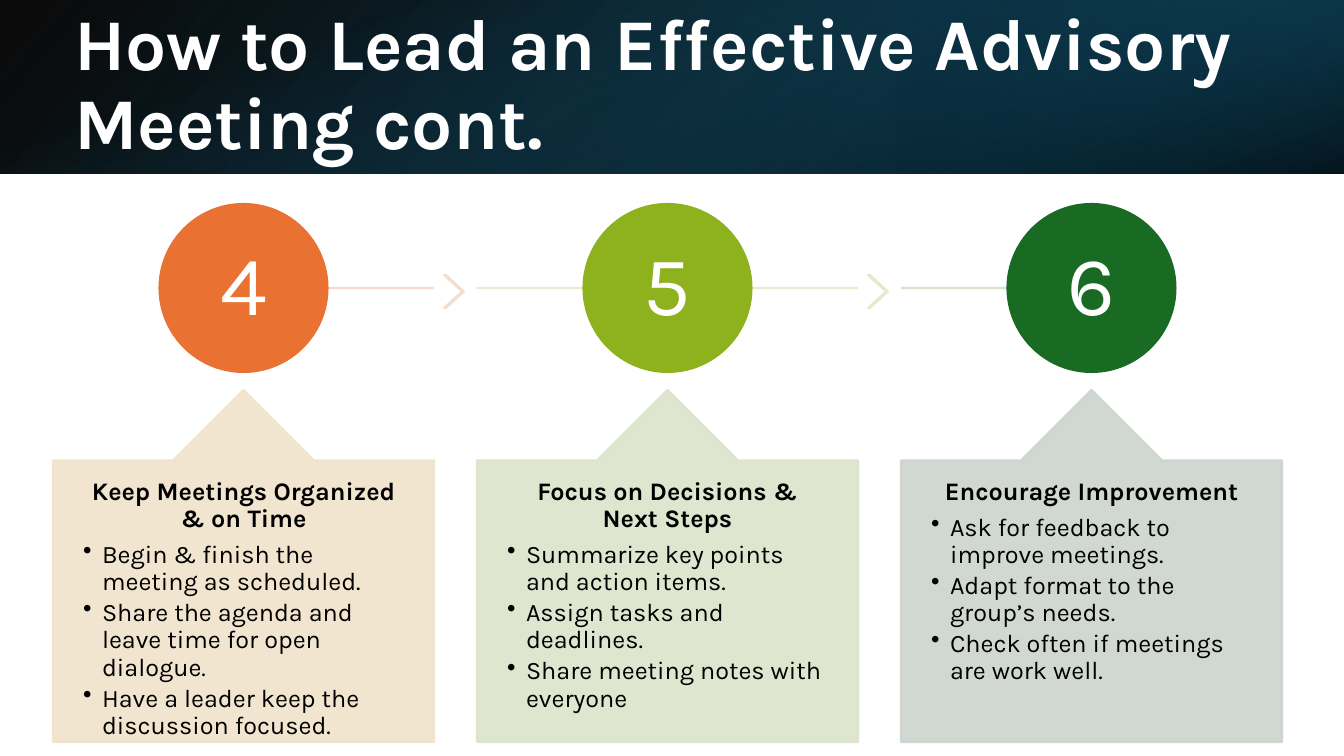
from lxml.etree import SubElement
from pptx import Presentation
from pptx.dml.color import RGBColor
from pptx.enum.shapes import MSO_CONNECTOR, MSO_SHAPE as Shape
from pptx.enum.text import MSO_ANCHOR as Anchor, MSO_AUTO_SIZE, PP_ALIGN as Align
from pptx.oxml.ns import qn
from pptx.util import Pt

PX = 914400 / 100.8
FONT = "Karla"
WHITE, BLACK = "FFFFFF", "000000"
CARD_LEFT, CARD_STEP, CARD_W = 53, 424, 381
CIRCLE = 168
LINE_Y = 288


def px(*lengths):
    return [round(length * PX) for length in lengths]


def paint(part, color, opacity=100):
    """Give a shape or connector one colour for fill and 1.5 pt line, without shadow."""
    part.line.color.rgb = RGBColor.from_string(color)
    part.line.width = Pt(1.5)
    properties = part._element.spPr
    if hasattr(part, "fill"):
        part.fill.solid()
        part.fill.fore_color.rgb = RGBColor.from_string(color)
        part.shadow.inherit = False
    else:
        SubElement(properties, qn("a:effectLst"))
    if opacity < 100:
        for tint in properties.iter(qn("a:srgbClr")):
            SubElement(tint, qn("a:alpha"), val=str(opacity * 1000))


prs = Presentation()
prs.slide_width, prs.slide_height = px(1344, 756)
slide = prs.slides.add_slide(prs.slide_layouts[5])
shapes = slide.shapes

# Header: three overlaid gradients; stops are position %, colour, opacity %
header_layers = [
    ((0, 0, 1344, 174), 0, True, 140, [(0, "000000", 96), (100, "104862", 100)]),
    ((896, 0, 448, 174), 180, True, 320, [(19, "0B3041", 68), (100, "156082", 79)]),
    ((585, -585, 174, 1344), 90, False, 340, [(23, "156082", 0), (99, "000000", 74)]),
]
for box, rotation, flipped, angle, stops in header_layers:
    band = shapes.add_shape(Shape.RECTANGLE, *px(*box))
    band.rotation = rotation
    band.shadow.inherit = False
    band.line.fill.background()
    if flipped:
        band._element.spPr.xfrm.set("flipH", "1")
    band.fill.gradient()
    band.fill.gradient_angle = 360 - angle
    for stop, (position, color, _) in zip(band.fill.gradient_stops, stops):
        stop.position = position / 100
        stop.color.rgb = RGBColor.from_string(color)
    for tint, (_, _, opacity) in zip(band._element.spPr.iter(qn("a:srgbClr")), stops):
        SubElement(tint, qn("a:alpha"), val=str(opacity * 1000))

title = shapes.title
title._element.getparent().append(title._element)
title.left, title.top, title.width, title.height = px(64, 38, 1195, 97)
title.text_frame.text = "How to Lead an Effective Advisory Meeting cont."
title.text_frame.auto_size = MSO_AUTO_SIZE.NONE
title.text_frame.vertical_anchor = Anchor.MIDDLE
heading = title.text_frame.paragraphs[0]
heading.alignment = Align.LEFT
heading.line_spacing = 0.9
heading.font.name, heading.font.size, heading.font.bold = FONT, Pt(52), True
heading.font.color.rgb = RGBColor.from_string(WHITE)

# Number, circle, card, line and chevron colours, line span within the card, texts
steps = [
    ("4", "E97132", "F0E3CB", "F7D5CE", "F3DDCC", (212, CARD_W),
     ["Keep Meetings Organized & on Time",
      "Begin & finish the meeting as scheduled.",
      "Share the agenda and leave time for open dialogue.",
      "Have a leader keep the discussion focused."]),
    ("5", "8EB21E", "DBE4CA", "ECE8CA", "E5E8CA", (0, CARD_W),
     ["Focus on Decisions & Next Steps",
      "Summarize key points and action items.",
      "Assign tasks and deadlines.",
      "Share meeting notes with everyone"]),
    ("6", "196B24", "CCD4CD", "D3DFCA", None, (0, 190),
     ["Encourage Improvement",
      "Ask for feedback to improve meetings.",
      "Adapt format to the group’s needs.",
      "Check often if meetings are work well."]),
]
for index, (number, strong, pale, line_color, chevron_color, span, texts) in enumerate(steps):
    left = CARD_LEFT + index * CARD_STEP

    link = shapes.add_connector(
        MSO_CONNECTOR.STRAIGHT, *px(left + span[0], LINE_Y, left + span[1], LINE_Y))
    paint(link, line_color, 90)
    if chevron_color:
        chevron = shapes.add_shape(Shape.CHEVRON, *px(left + 391, 275, 20, 33))
        chevron.adjustments[0] = 0.9
        paint(chevron, chevron_color, 90)

    circle = shapes.add_shape(
        Shape.OVAL, *px(left + (CARD_W - CIRCLE) / 2, LINE_Y - CIRCLE / 2, CIRCLE, CIRCLE))
    paint(circle, strong)
    circle.text_frame.text = number
    circle.text_frame.vertical_anchor = Anchor.MIDDLE
    digit = circle.text_frame.paragraphs[0]
    digit.alignment = Align.CENTER
    digit.line_spacing = 0.9
    digit.font.name, digit.font.size = FONT, Pt(60)
    digit.font.color.rgb = RGBColor.from_string(WHITE)

    card = shapes.add_shape(Shape.UP_ARROW_CALLOUT, *px(left, 390, CARD_W, 352))
    for place, ratio in enumerate((0.5, 0.2, 0.2, 1)):
        card.adjustments[place] = ratio
    paint(card, pale, 90)
    frame = card.text_frame
    frame.word_wrap = True
    frame.vertical_anchor = Anchor.TOP
    frame.margin_left, frame.margin_top, frame.margin_right, frame.margin_bottom = px(30, 18, 30, 0)
    frame.text = "\n".join(texts)
    for row, paragraph in enumerate(frame.paragraphs):
        is_heading = row == 0
        paragraph.alignment = Align.CENTER if is_heading else Align.LEFT
        paragraph.line_spacing = 0.9
        paragraph.space_after = Pt(6.3 if is_heading else 2.7)
        if not is_heading:
            layout = paragraph._p.get_or_add_pPr()
            indent, = px(19)
            layout.set("marL", str(indent))
            layout.set("indent", str(-indent))
            SubElement(layout, qn("a:buChar"), char="•")
        paragraph.font.name, paragraph.font.size = FONT, Pt(18)
        paragraph.font.bold = is_heading
        paragraph.font.color.rgb = RGBColor.from_string(BLACK)

prs.save("out.pptx")
